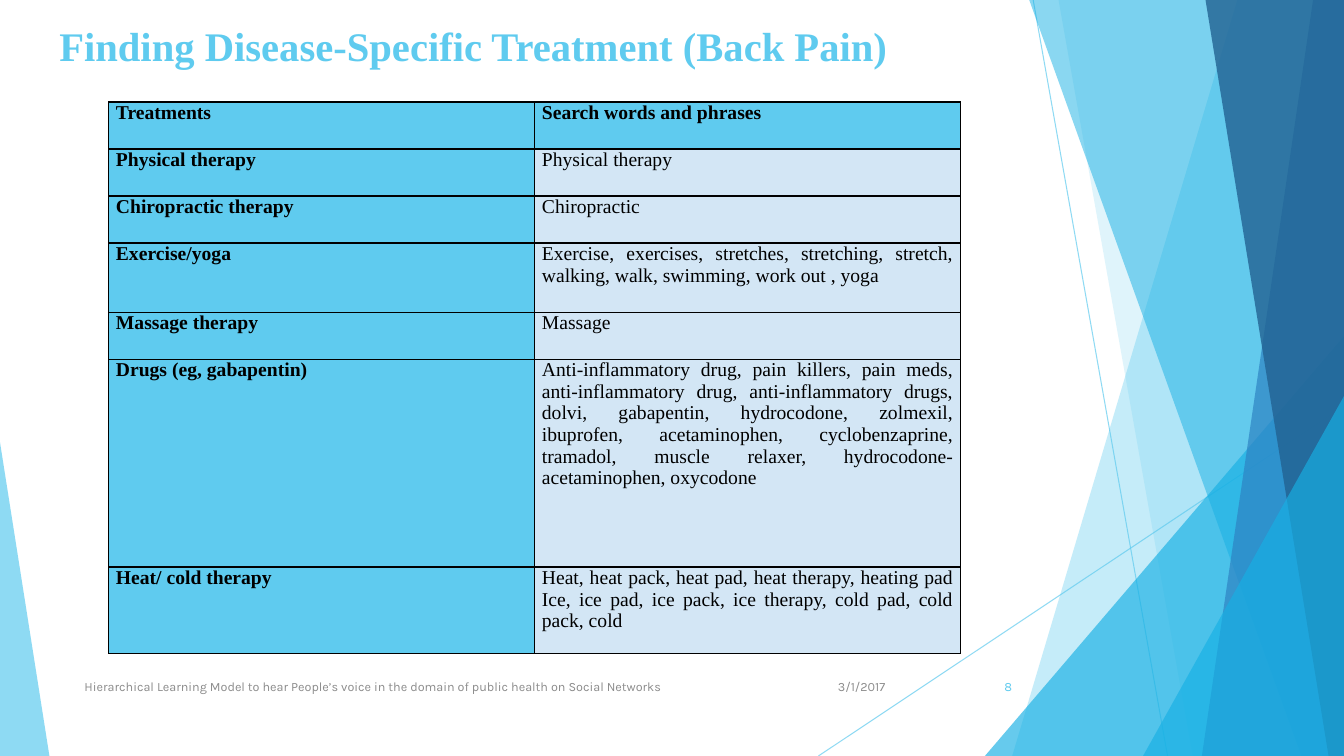
from lxml.etree import SubElement
from pptx import Presentation
from pptx.dml.color import RGBColor
from pptx.enum.shapes import MSO_CONNECTOR, MSO_SHAPE
from pptx.enum.text import MSO_ANCHOR, PP_ALIGN
from pptx.oxml.ns import qn
from pptx.util import Pt

SKY = RGBColor(0x5F, 0xCB, 0xEF)
CYAN = RGBColor(0x17, 0xB0, 0xE4)
BLUE = RGBColor(0x2E, 0x83, 0xC3)
NAVY = RGBColor(0x22, 0x62, 0x92)
PALE = RGBColor(0xD3, 0xE6, 0xF5)
GREY = RGBColor(0x8C, 0x8C, 0x8C)
BLACK = RGBColor(0, 0, 0)

SERIF, SANS = "Times New Roman", "Karla"
WIDTH, HEIGHT = 960, 540
BLEED = -0.6  # the facets start just above the slide

ROW_HEIGHTS = [33.6, 33.6, 33.6, 49.4, 33.6, 148.5, 62]
TREATMENTS = [
    ("Treatments", "Search words and phrases"),
    ("Physical therapy", "Physical therapy"),
    ("Chiropractic therapy", "Chiropractic"),
    ("Exercise/yoga",
     "Exercise, exercises, stretches, stretching, stretch, walking, walk, "
     "swimming, work out , yoga"),
    ("Massage therapy", "Massage"),
    ("Drugs (eg, gabapentin) ",
     "Anti-inflammatory drug, pain killers, pain meds, anti-inflammatory drug, "
     "anti-inflammatory drugs, dolvi, gabapentin, hydrocodone, zolmexil, ibuprofen, "
     "acetaminophen, cyclobenzaprine, tramadol, muscle relaxer, "
     "hydrocodone-acetaminophen, oxycodone"),
    ("Heat/ cold therapy ",
     "Heat, heat pack, heat pad, heat therapy, heating pad Ice, ice pad, ice pack, "
     "ice therapy, cold pad, cold pack, cold"),
]


def set_alpha(sp, percent):
    for color in sp._element.spPr.iter(qn("a:srgbClr")):
        SubElement(color, qn("a:alpha"), val=str(percent * 1000))


def paint(sp, color, alpha):
    sp.shadow.inherit = False
    sp.fill.solid()
    sp.fill.fore_color.rgb = color
    sp.line.fill.background()
    set_alpha(sp, alpha)


def add_ray(slide, x1, y1, x2, y2):
    line = slide.shapes.add_connector(
        MSO_CONNECTOR.STRAIGHT, Pt(x1), Pt(y1), Pt(x2), Pt(y2))
    line.line.color.rgb = SKY
    line.line.width = Pt(0.75)
    set_alpha(line, 70)
    SubElement(line._element.spPr, qn("a:effectLst"))


def add_facet(slide, top_x, bottom_x, color, alpha):
    """Full-height panel from a slanted left edge to the slide's right edge."""
    builder = slide.shapes.build_freeform(Pt(top_x), Pt(BLEED), scale=1.0)
    corners = [(WIDTH, BLEED), (WIDTH, HEIGHT), (bottom_x, HEIGHT)]
    builder.add_line_segments([(Pt(x), Pt(y)) for x, y in corners], close=True)
    paint(builder.convert_to_shape(), color, alpha)


def add_triangle(slide, left, top, width, apex, color, alpha):
    """Triangle standing on the bottom edge of the slide."""
    sp = slide.shapes.add_shape(
        MSO_SHAPE.ISOSCELES_TRIANGLE, Pt(left), Pt(top), Pt(width), Pt(HEIGHT - top))
    sp.adjustments[0] = apex
    paint(sp, color, alpha)


def write(p, text, size, font, color, bold=False, align=PP_ALIGN.LEFT):
    p.alignment = align
    r = p.add_run()
    r.text = text
    r.font.size = Pt(size)
    r.font.name = font
    r.font.bold = bold
    r.font.color.rgb = color


def add_text(slide, box, text, size, font, color, bold=False,
             align=PP_ALIGN.LEFT, anchor=MSO_ANCHOR.MIDDLE):
    tf = slide.shapes.add_textbox(*map(Pt, box)).text_frame
    tf.word_wrap = True
    tf.vertical_anchor = anchor
    write(tf.paragraphs[0], text, size, font, color, bold, align)


def add_borders(cell):
    tcPr = cell._tc.get_or_add_tcPr()
    for side in ("a:lnL", "a:lnR", "a:lnT", "a:lnB"):
        ln = SubElement(tcPr, qn(side), w=str(Pt(1)))
        fill = SubElement(ln, qn("a:solidFill"))
        SubElement(fill, qn("a:srgbClr"), val=str(BLACK))


def add_treatment_table(slide):
    table = slide.shapes.add_table(
        len(TREATMENTS), 2, Pt(77.6), Pt(72.8), Pt(608.6), Pt(sum(ROW_HEIGHTS))).table
    table.first_row = table.horz_banding = False
    for row, height in zip(table.rows, ROW_HEIGHTS):
        row.height = Pt(height)
    for i, texts in enumerate(TREATMENTS):
        for j, text in enumerate(texts):
            heading = i == 0 or j == 0
            cell = table.cell(i, j)
            cell.margin_left = cell.margin_right = Pt(5.2)
            cell.margin_top = cell.margin_bottom = 0
            add_borders(cell)
            cell.fill.solid()
            cell.fill.fore_color.rgb = SKY if heading else PALE
            write(cell.text_frame.paragraphs[0], text, 14, SERIF, BLACK,
                  heading, PP_ALIGN.JUSTIFY)


def add_backdrop(slide):
    add_ray(slide, 738, 0, 834, HEIGHT)
    add_ray(slide, WIDTH, 290, 584.6, HEIGHT)
    add_facet(slide, 884, 723, SKY, 36)
    add_facet(slide, 756, 852, SKY, 20)
    add_triangle(slide, 703.5, 240, 256.5, 1, CYAN, 66)
    add_facet(slide, 735, 929.5, CYAN, 50)
    add_facet(slide, 938, 858.5, BLUE, 70)
    add_facet(slide, 861, 949, NAVY, 80)
    add_triangle(slide, 816.5, 283, 143.5, 1, CYAN, 66)
    add_triangle(slide, 0, 316, 35.3, 0, SKY, 70)


def main():
    prs = Presentation()
    prs.slide_width, prs.slide_height = Pt(WIDTH), Pt(HEIGHT)
    slide = prs.slides.add_slide(prs.slide_layouts[6])

    add_backdrop(slide)

    # Title
    add_text(slide, (35.3, 11.5, 708.5, 61), "Finding Disease-Specific Treatment (Back Pain)",
             29, SERIF, SKY, bold=True, anchor=MSO_ANCHOR.TOP)

    # Footer: date, talk title, slide number
    add_text(slide, (567.4, 476, 72, 28.8), "3/1/2017", 9, SANS, GREY, align=PP_ALIGN.RIGHT)
    add_text(slide, (53.3, 476, 496, 28.8),
             "Hierarchical Learning Model to hear People’s voice in the domain of "
             "public health on Social Networks", 9, SANS, GREY)
    add_text(slide, (676, 476, 54, 28.8), "8", 9, SANS, SKY, align=PP_ALIGN.RIGHT)

    add_treatment_table(slide)
    prs.save("out.pptx")


if __name__ == "__main__":
    main()
